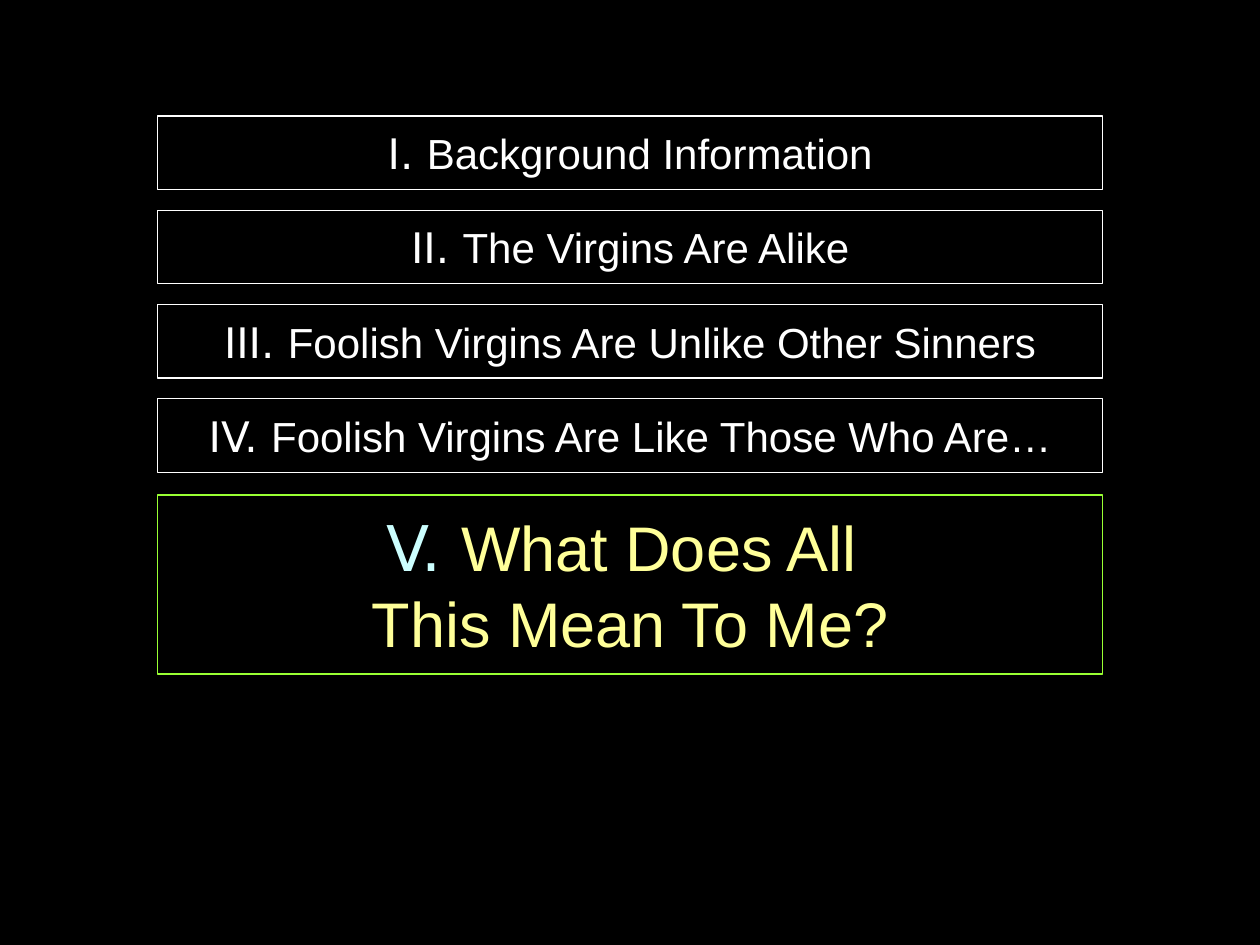
from pptx import Presentation
from pptx.dml.color import RGBColor
from pptx.enum.shapes import MSO_SHAPE
from pptx.enum.text import MSO_ANCHOR, MSO_AUTO_SIZE, PP_ALIGN
from pptx.util import Cm, Pt

RECTANGLE = MSO_SHAPE.RECTANGLE
MIDDLE = MSO_ANCHOR.MIDDLE
NO_AUTOFIT = MSO_AUTO_SIZE.NONE
CENTER = PP_ALIGN.CENTER

BLACK, WHITE = "000000", "FFFFFF"
GREEN, CYAN, YELLOW = "99FF33", "CCFFFF", "FFFF99"

LEFT, WIDTH = 3.18, 19.05
FIRST_TOP, PITCH, HEIGHT = 2.34, 1.9, 1.48


def color(hex_string):
    return RGBColor.from_string(hex_string)


def add_text(paragraph, text, *, size, font, hex_color):
    """Add text to the paragraph; a newline becomes a line break."""
    for index, line in enumerate(text.split("\n")):
        if index:
            paragraph.add_line_break()
        run = paragraph.add_run()
        run.text = line
        run.font.size = Pt(size)
        run.font.name = font
        run.font.color.rgb = color(hex_color)


class OutlineSlide:
    numeral_font = "DejaVu Sans"
    text_font = "Arial"

    def __init__(self, presentation):
        self.slide = presentation.slides.add_slide(presentation.slide_layouts[5])
        background = self.slide.background.fill
        background.solid()
        background.fore_color.rgb = color(BLACK)

    def title(self, numeral, text, top, height, **style):
        shape = self.slide.shapes.title
        shape.left, shape.top = Cm(LEFT), Cm(top)
        shape.width, shape.height = Cm(WIDTH), Cm(height)
        self.format_box(shape, numeral, text, **style)

    def box(self, numeral, text, top, height, **style):
        shape = self.slide.shapes.add_shape(
            RECTANGLE, Cm(LEFT), Cm(top), Cm(WIDTH), Cm(height))
        shape.shadow.inherit = False
        self.format_box(shape, numeral, text, **style)

    def format_box(self, shape, numeral, text, size=24, line=WHITE,
                   numeral_color=WHITE, text_color=WHITE):
        shape.fill.solid()
        shape.fill.fore_color.rgb = color(BLACK)
        shape.line.color.rgb = color(line)
        shape.line.width = Pt(0.75)
        frame = shape.text_frame
        frame.word_wrap = True
        frame.auto_size = NO_AUTOFIT
        frame.vertical_anchor = MIDDLE
        paragraph = frame.paragraphs[0]
        paragraph.alignment = CENTER
        add_text(paragraph, f"{numeral}. ", size=size,
                 font=self.numeral_font, hex_color=numeral_color)
        add_text(paragraph, text, size=size,
                 font=self.text_font, hex_color=text_color)


def main():
    presentation = Presentation()
    presentation.slide_width, presentation.slide_height = Cm(25.4), Cm(19.05)
    outline = OutlineSlide(presentation)

    # Title: the first point
    outline.title("I", "Background Information", FIRST_TOP, HEIGHT)

    # Remaining points, evenly stacked
    points = [
        ("II", "The Virgins Are Alike"),
        ("III", "Foolish Virgins Are Unlike Other Sinners"),
        ("IV", "Foolish Virgins Are Like Those Who Are…"),
    ]
    for row, (numeral, text) in enumerate(points, start=1):
        outline.box(numeral, text, FIRST_TOP + row * PITCH, HEIGHT)

    # Current point, highlighted
    outline.box("V", "What Does All \nThis Mean To Me?", 9.98, 3.61, size=36,
                line=GREEN, numeral_color=CYAN, text_color=YELLOW)

    presentation.save("out.pptx")


if __name__ == "__main__":
    main()
